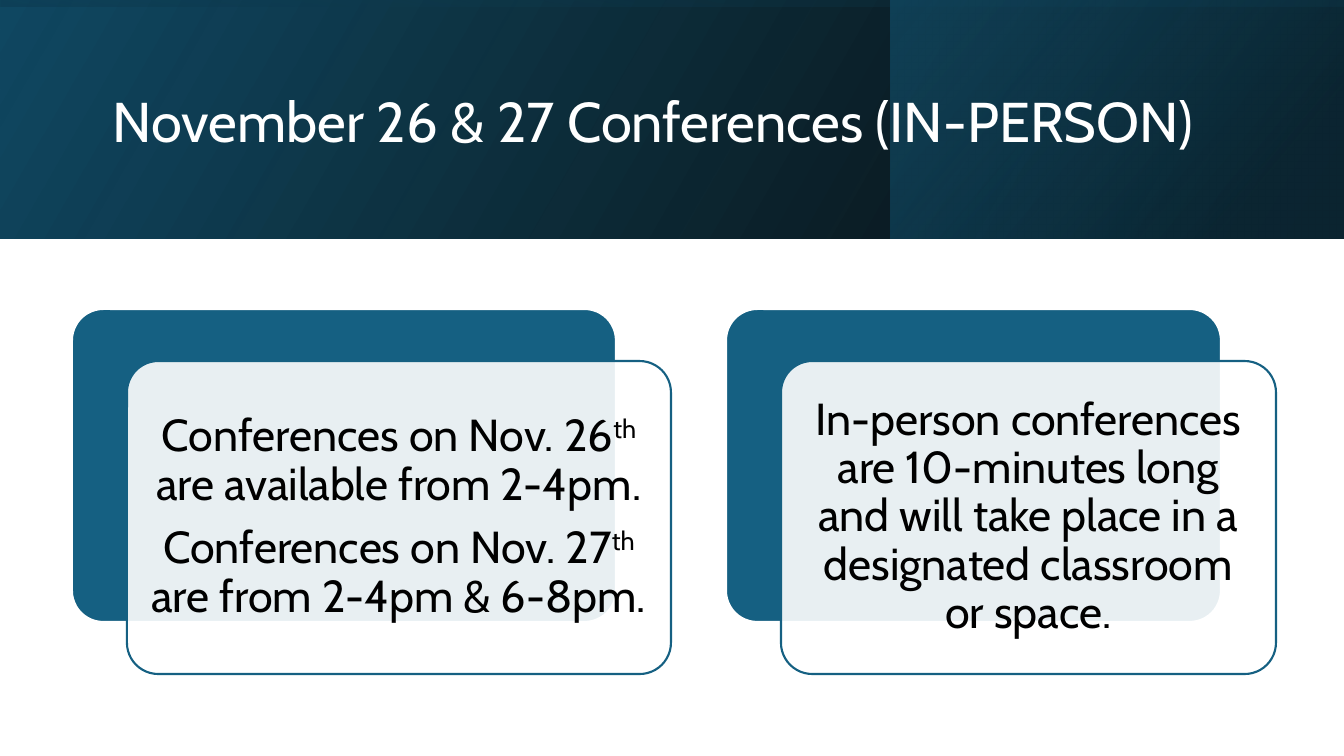
from pptx import Presentation
from pptx.dml.color import RGBColor
from pptx.enum.shapes import MSO_SHAPE
from pptx.enum.text import MSO_ANCHOR, PP_ALIGN
from pptx.oxml.ns import qn
from pptx.util import Emu, Pt
from lxml import etree

EMU_PER_INCH, PX_PER_INCH = 914400, 100.8
SLIDE_WIDTH, SLIDE_HEIGHT = 1344, 756
BAND_HEIGHT = 239
CARD_OFFSET_X, CARD_OFFSET_Y = 55, 52
TEXT_INSET, TEXT_MARGIN = 9, 13
FONT = "Cabin"

WHITE = RGBColor(0xFF, 0xFF, 0xFF)
BLACK = RGBColor(0, 0, 0)
TEAL = RGBColor(0x15, 0x60, 0x82)
DEEP_TEAL = RGBColor(0x10, 0x48, 0x62)
DARK_TEAL = RGBColor(0x0B, 0x30, 0x41)

# Each paragraph is a list of (text, is_superscript) runs.
DATES = [
    [("Conferences on Nov. 26", False), ("th", True),
     (" are available from 2-4pm.", False)],
    [("Conferences on Nov. 27", False), ("th", True),
     (" are from 2-4pm & 6-8pm.", False)],
]
FORMAT = [[("In-person conferences are 10-minutes long and will take place "
            "in a designated classroom or space.", False)]]


def px(length):
    return Emu(round(length * EMU_PER_INCH / PX_PER_INCH))


def set_alpha(color_element, percent):
    alpha = etree.SubElement(color_element, qn("a:alpha"))
    alpha.set("val", str(percent * 1000))


def add_shape(slide, kind, left, top, width, height):
    shape = slide.shapes.add_shape(kind, px(left), px(top), px(width), px(height))
    shape.shadow.inherit = False
    return shape


def add_gradient(slide, box, stops, angle, rotation=0):
    """Add a mirrored rectangle; stops are (position, colour, opacity percent)."""
    shape = add_shape(slide, MSO_SHAPE.RECTANGLE, *box)
    shape.line.fill.background()
    shape.rotation = rotation
    shape._element.spPr.find(qn("a:xfrm")).set("flipH", "1")
    shape.fill.gradient()
    shape.fill.gradient_angle = angle
    for stop, (position, color, opacity) in zip(shape.fill.gradient_stops, stops):
        stop.position = position
        stop.color.rgb = color
    for element, (_, _, opacity) in zip(
            shape._element.spPr.iter(qn("a:srgbClr")), stops):
        set_alpha(element, opacity)


def add_text(slide, left, top, width, height, paragraphs, size, color,
             alignment, margin, space_after=0):
    text_box = slide.shapes.add_textbox(px(left), px(top), px(width), px(height))
    frame = text_box.text_frame
    frame.word_wrap = True
    frame.vertical_anchor = MSO_ANCHOR.MIDDLE
    frame.margin_left = frame.margin_right = px(margin)
    frame.margin_top = frame.margin_bottom = px(margin)
    for index, runs in enumerate(paragraphs):
        paragraph = frame.add_paragraph() if index else frame.paragraphs[0]
        paragraph.alignment = alignment
        paragraph.line_spacing = 0.9
        paragraph.space_after = Pt(space_after)
        paragraph.font.name = FONT
        paragraph.font.size = Pt(size)
        paragraph.font.color.rgb = color
        for text, is_superscript in runs:
            run = paragraph.add_run()
            run.text = text
            if is_superscript:
                run.font._element.set("baseline", "30000")


def add_header(slide, width, height):
    add_gradient(slide, (0, 0, width, height),
                 [(0, BLACK, 96), (1, DEEP_TEAL, 100)], 30)
    add_gradient(slide, (891, 0, 452, height),
                 [(0.19, DARK_TEAL, 68), (1, TEAL, 48)], 40)
    # A quarter turn lays this tall rectangle across the band.
    add_gradient(slide, ((width - height) / 2, (height - width) / 2, height, width),
                 [(0.23, DEEP_TEAL, 16), (0.99, BLACK, 45)], 10, rotation=270)
    add_text(slide, 103, 38, 1137, 173,
             [[("November 26 & 27 Conferences (IN-PERSON)", False)]],
             40, WHITE, PP_ALIGN.LEFT, 10)


def add_card_panel(slide, box, fill_color, line_color):
    panel = add_shape(slide, MSO_SHAPE.ROUNDED_RECTANGLE, *box)
    panel.adjustments[0] = 0.1
    panel.fill.solid()
    panel.fill.fore_color.rgb = fill_color
    panel.line.color.rgb = line_color
    panel.line.width = Pt(1.5)
    return panel


def add_card(slide, left, top, width, height, paragraphs):
    add_card_panel(slide, (left, top, width, height), TEAL, WHITE)
    left, top = left + CARD_OFFSET_X, top + CARD_OFFSET_Y
    front = add_card_panel(slide, (left, top, width, height), WHITE, TEAL)
    set_alpha(front._element.spPr.find(qn("a:solidFill"))[0], 90)
    add_text(slide, left + TEXT_INSET, top + TEXT_INSET,
             width - 2 * TEXT_INSET, height - 2 * TEXT_INSET,
             paragraphs, 32, BLACK, PP_ALIGN.CENTER, TEXT_MARGIN, space_after=11)


def main():
    presentation = Presentation()
    presentation.slide_width = px(SLIDE_WIDTH)
    presentation.slide_height = px(SLIDE_HEIGHT)
    slide = presentation.slides.add_slide(presentation.slide_layouts[6])
    add_header(slide, SLIDE_WIDTH, BAND_HEIGHT)
    add_card(slide, 72, 309, 544, 313, DATES)
    add_card(slide, 726, 309, 495, 313, FORMAT)
    presentation.save("out.pptx")


if __name__ == "__main__":
    main()
